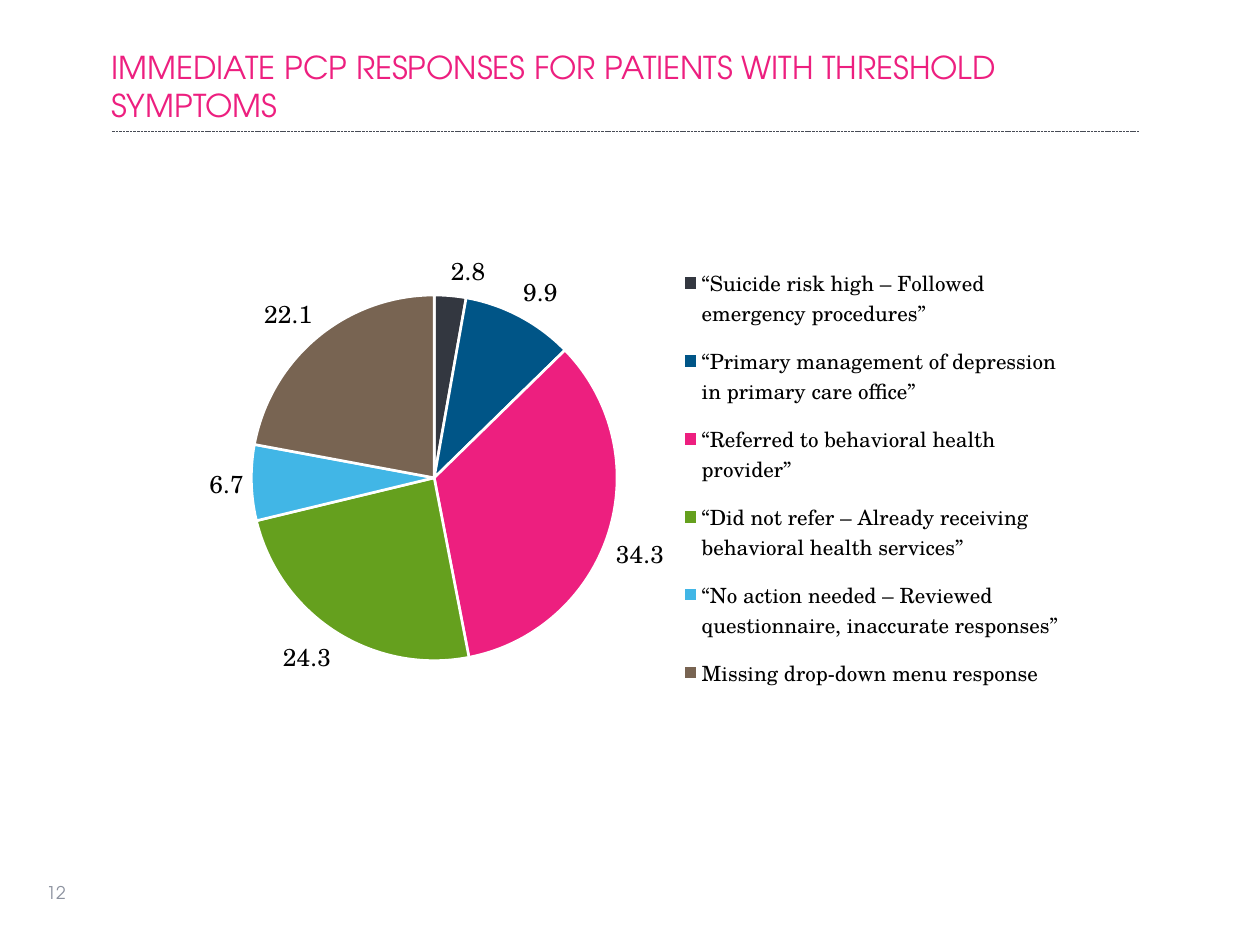
from pptx import Presentation
from pptx.chart.data import CategoryChartData
from pptx.dml.color import RGBColor
from pptx.enum.chart import XL_CHART_TYPE as ChartType
from pptx.enum.chart import XL_LABEL_POSITION as LabelPosition
from pptx.enum.chart import XL_LEGEND_POSITION as LegendPosition
from pptx.enum.dml import MSO_LINE_DASH_STYLE as Dash
from pptx.enum.shapes import MSO_CONNECTOR as Connector
from pptx.enum.text import MSO_ANCHOR as Anchor
from pptx.oxml import parse_xml
from pptx.oxml.ns import nsdecls, qn
from pptx.util import Emu, Pt

PX_PER_INCH = 126
SANS, SERIF = "TeX Gyre Adventor", "TeX Gyre Schola"

PINK = RGBColor(0xED, 0x1F, 0x7F)
GREY = RGBColor(0x8B, 0x91, 0x9E)
RULE_GREY = RGBColor(0x47, 0x4B, 0x55)
CHARCOAL = RGBColor(0x33, 0x37, 0x40)
NAVY = RGBColor(0x00, 0x55, 0x87)
GREEN = RGBColor(0x65, 0xA0, 0x1E)
SKY = RGBColor(0x41, 0xB6, 0xE6)
BROWN = RGBColor(0x78, 0x64, 0x52)
BLACK = RGBColor(0, 0, 0)
WHITE = RGBColor(0xFF, 0xFF, 0xFF)

RESPONSES = [
    ("“Suicide risk high – Followed emergency procedures”", 2.8, CHARCOAL),
    ("“Primary management of depression in primary care office”", 9.9, NAVY),
    ("“Referred to behavioral health provider”", 34.3, PINK),
    ("“Did not refer – Already receiving behavioral health services”", 24.3, GREEN),
    ("“No action needed – Reviewed questionnaire, inaccurate responses”", 6.7, SKY),
    ("Missing drop-down menu response", 22.1, BROWN),
]


def px(*lengths):
    return [Emu(round(length * 914400 / PX_PER_INCH)) for length in lengths]


def set_font(font, name, size, color):
    for key, value in {"name": name, "size": Pt(size)}.items():
        setattr(font, key, value)
    font.color.rgb = color


def add_text(page, frame, text, size, color):
    box = page.shapes.add_textbox(*px(*frame))
    box.text_frame.word_wrap = True
    box.text_frame.vertical_anchor = Anchor.TOP
    span = box.text_frame.paragraphs[0].add_run()
    span.text = text
    set_font(span.font, SANS, size, color)


def add_rule(page, left, right, top):
    rule = page.shapes.add_connector(Connector.STRAIGHT, *px(left, top, right, top))
    rule.line.color.rgb = RULE_GREY
    rule.line.width = Pt(0.5)
    rule.line.dash_style = Dash.SQUARE_DOT
    rule._element.spPr.append(parse_xml(f"<a:effectLst {nsdecls('a')}/>"))


def set_layout(element, index, x, y, w, h, inner=False):
    """Fix the place of a chart part, in fractions of the chart."""
    for old in element.findall(qn("c:layout")):
        element.remove(old)
    target = '<c:layoutTarget val="inner"/>' if inner else ""
    modes = '<c:xMode val="edge"/><c:yMode val="edge"/>'
    sizes = "".join(
        f'<c:{key} val="{value}"/>'
        for key, value in {"x": x, "y": y, "w": w, "h": h}.items()
    )
    element.insert(index, parse_xml(
        f"<c:layout {nsdecls('c')}><c:manualLayout>{target}{modes}{sizes}"
        "</c:manualLayout></c:layout>"
    ))


def add_pie(page, frame, responses):
    names, values, colors = zip(*responses)
    data = CategoryChartData(number_format="0.0")
    data.categories = names
    data.add_series("Series 1", values)
    chart = page.shapes.add_chart(ChartType.PIE, *px(*frame), data).chart
    chart.has_title = False
    set_font(chart.font, "Cambria", 10, BLACK)

    plot = chart.plots[0]
    plot.vary_by_categories = True
    series = plot.series[0]
    for index, color in enumerate(colors):
        slice_format = series.points[index].format
        slice_format.fill.solid()
        slice_format.fill.fore_color.rgb = color
        slice_format.line.color.rgb = WHITE
        slice_format.line.width = Pt(1.5)

    labels = series.data_labels
    for key, value in {
        "show_value": True,
        "show_percentage": False,
        "number_format": "0.0",
        "number_format_is_linked": False,
        "position": LabelPosition.OUTSIDE_END,
    }.items():
        setattr(labels, key, value)
    set_font(labels.font, SERIF, 14, BLACK)

    chart.has_legend = True
    chart.legend.position = LegendPosition.RIGHT
    chart.legend.include_in_layout = False
    set_font(chart.legend.font, SERIF, 12, BLACK)
    set_layout(chart.legend._element, 1, 0.56, 0.05, 0.43, 0.92)
    plot_area = chart._chartSpace.chart.plotArea
    set_layout(plot_area, 0, 0.08, 0.11, 0.41, 0.8, inner=True)


def main():
    deck = Presentation()
    deck.slide_width, deck.slide_height = px(1260, 945)
    page = deck.slides.add_slide(deck.slide_layouts[6])
    add_rule(page, 112, 1139, 131)
    add_text(page, (99, 42, 1040, 69),
             "IMMEDIATE PCP RESPONSES FOR PATIENTS WITH THRESHOLD SYMPTOMS", 18, PINK)
    add_text(page, (34, 876, 294, 50), "12", 10, GREY)
    add_pie(page, (180, 226, 892, 494), RESPONSES)
    deck.save("out.pptx")


if __name__ == "__main__":
    main()
